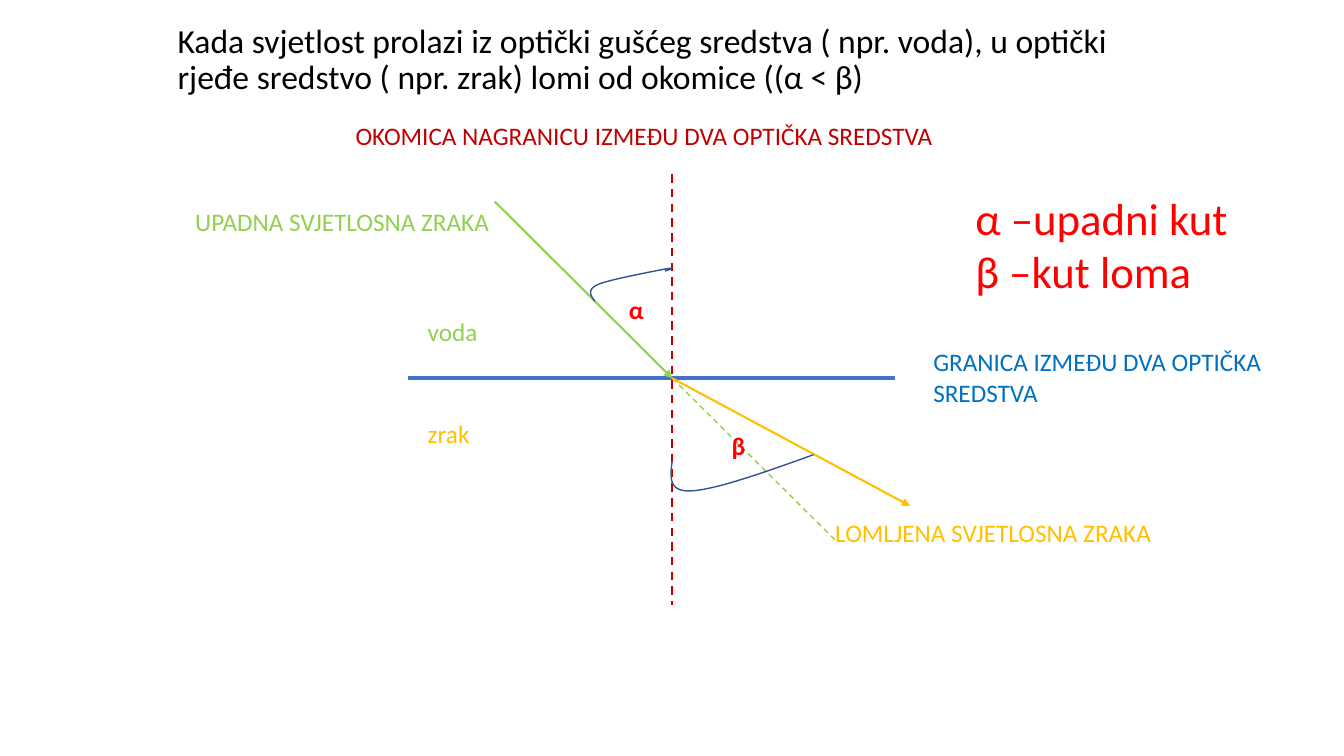
from dataclasses import dataclass

from pptx import Presentation
from pptx.dml.color import RGBColor
from pptx.enum.dml import MSO_LINE
from pptx.enum.shapes import MSO_CONNECTOR
from pptx.enum.text import MSO_ANCHOR, MSO_AUTO_SIZE, PP_ALIGN
from pptx.oxml.ns import qn
from pptx.util import Cm, Pt
from lxml.etree import SubElement

Point = tuple[float, float]


@dataclass(frozen=True)
class Theme:
    font: str = "Calibri"
    title_size: int = 24
    label_size: int = 18
    key_size: int = 32
    black: str = "000000"
    water: str = "92D050"
    air: str = "FFC000"
    normal: str = "C00000"
    angle: str = "FF0000"
    boundary: str = "4472C4"
    boundary_text: str = "0070C0"
    arc: str = "325491"


@dataclass(frozen=True)
class Line:
    start: Point
    end: Point
    color: str
    width: float
    dashed: bool = False
    arrow: bool = False


@dataclass(frozen=True)
class Arc:
    start: Point
    curves: list[tuple[Point, Point, Point]]  # two controls and an end each


@dataclass(frozen=True)
class Label:
    lines: list[str]
    left: float
    top: float
    width: float
    color: str
    height: float = 1.02
    size: int = Theme.label_size
    bold: bool = False
    wrap: bool = True


T = Theme()
HIT: Point = (16.94, 9.53)  # where the ray meets the boundary

TITLE = Label(["Kada svjetlost prolazi iz optički gušćeg sredstva ( npr. voda), u optički "
               "rjeđe sredstvo ( npr. zrak) lomi od okomice ((α ˂ β)"],
              4.22, 0.48, 25.4, T.black, 2.36, T.title_size)

LINES = [
    Line((10.29, HIT[1]), (22.56, HIT[1]), T.boundary, 3),
    Line((HIT[0], 4.39), (HIT[0], 15.24), T.normal, 1.5, dashed=True),
    Line((12.47, 5.08), HIT, T.water, 1.5, arrow=True),
    Line(HIT, (21.11, 13.67), T.water, 1, dashed=True),
    Line(HIT, (22.94, 12.75), T.air, 1.5, arrow=True),
]

ARCS = [
    Arc((14.99, 7.59), [((14.88, 7.44), (14.78, 7.29), (15.09, 7.16)),
                        ((15.37, 7.04), (16.76, 6.78), (16.76, 6.78)),
                        ((17.04, 6.73), (16.92, 6.78), (16.76, 6.83))]),
    Arc((HIT[0], 11.63), [((16.89, 12.01), (16.84, 12.4), (17.42, 12.37)),
                          ((18.03, 12.34), (19.25, 11.91), (20.5, 11.46))]),
]

LABELS = [
    Label(["zrak"], 10.53, 10.41, 2.87, T.air),
    Label(["voda"], 10.53, 7.85, 2.87, T.water),
    Label(["α"], 15.6, 7.29, 1.32, T.angle, bold=True),
    Label(["β"], 18.19, 10.72, 0.91, T.angle, bold=True),
    Label(["α –upadni kut", "β –kut loma"], 24.33, 4.67, 6.93, T.angle, 3,
          T.key_size, wrap=False),
    Label(["OKOMICA NAGRANICU IZMEĐU DVA OPTIČKA SREDSTVA"], 8.71, 2.9, 15.16, T.normal),
    Label(["UPADNA SVJETLOSNA ZRAKA"], 4.67, 5.08, 8.08, T.water),
    Label(["LOMLJENA SVJETLOSNA ZRAKA"], 20.8, 12.9, 8.81, T.air),
    Label(["GRANICA IZMEĐU DVA OPTIČKA SREDSTVA"], 23.27, 8.61, 9.78,
          T.boundary_text, 1.8),
]


def write(tf, label: Label) -> None:
    tf.word_wrap = label.wrap
    tf.auto_size = MSO_AUTO_SIZE.NONE
    tf.vertical_anchor = MSO_ANCHOR.TOP
    for i, text in enumerate(label.lines):
        p = tf.add_paragraph() if i else tf.paragraphs[0]
        p.alignment = PP_ALIGN.LEFT
        r = p.add_run()
        r.text = text
        r.font.name = T.font
        r.font.size = Pt(label.size)
        r.font.bold = label.bold
        r.font.color.rgb = RGBColor.from_string(label.color)


def add_title(s, label: Label) -> None:
    sp = s.shapes.title
    sp.left, sp.top = Cm(label.left), Cm(label.top)
    sp.width, sp.height = Cm(label.width), Cm(label.height)
    write(sp.text_frame, label)
    sp.text_frame.paragraphs[0].line_spacing = 0.9


def add_label(s, label: Label) -> None:
    sp = s.shapes.add_textbox(Cm(label.left), Cm(label.top),
                              Cm(label.width), Cm(label.height))
    write(sp.text_frame, label)


def add_line(s, line: Line) -> None:
    cx = s.shapes.add_connector(MSO_CONNECTOR.STRAIGHT,
                                *map(Cm, line.start), *map(Cm, line.end))
    cx.line.color.rgb = RGBColor.from_string(line.color)
    cx.line.width = Pt(line.width)
    if line.dashed:
        cx.line.dash_style = MSO_LINE.DASH
    if line.arrow:
        SubElement(cx.line._get_or_add_ln(), qn("a:tailEnd"), type="triangle")
    SubElement(cx._element.spPr, qn("a:effectLst"))


def bezier(a: Point, b: Point, c: Point, d: Point, steps: int = 24) -> list[Point]:
    points = []
    for t in (i / steps for i in range(1, steps + 1)):
        u = 1 - t
        weights = (u**3, 3 * u * u * t, 3 * u * t * t, t**3)
        x, y = (sum(w * q[k] for w, q in zip(weights, (a, b, c, d))) for k in (0, 1))
        points.append((x, y))
    return points


def add_arc(s, arc: Arc) -> None:
    points, start = [], arc.start
    for curve in arc.curves:
        points += bezier(start, *curve)
        start = curve[-1]
    fb = s.shapes.build_freeform(*map(Cm, arc.start))
    fb.add_line_segments([(Cm(x), Cm(y)) for x, y in points], close=False)
    sp = fb.convert_to_shape()
    sp.shadow.inherit = False
    sp.fill.background()
    sp.line.color.rgb = RGBColor.from_string(T.arc)
    sp.line.width = Pt(1)


def main() -> None:
    prs = Presentation()
    prs.slide_width, prs.slide_height = Cm(33.87), Cm(19.05)
    s = prs.slides.add_slide(prs.slide_layouts[5])
    add_title(s, TITLE)
    # Boundary, normal and rays
    for line in LINES:
        add_line(s, line)
    # Angles
    for arc in ARCS:
        add_arc(s, arc)
    # Captions and key
    for label in LABELS:
        add_label(s, label)
    prs.save("out.pptx")


if __name__ == "__main__":
    main()
